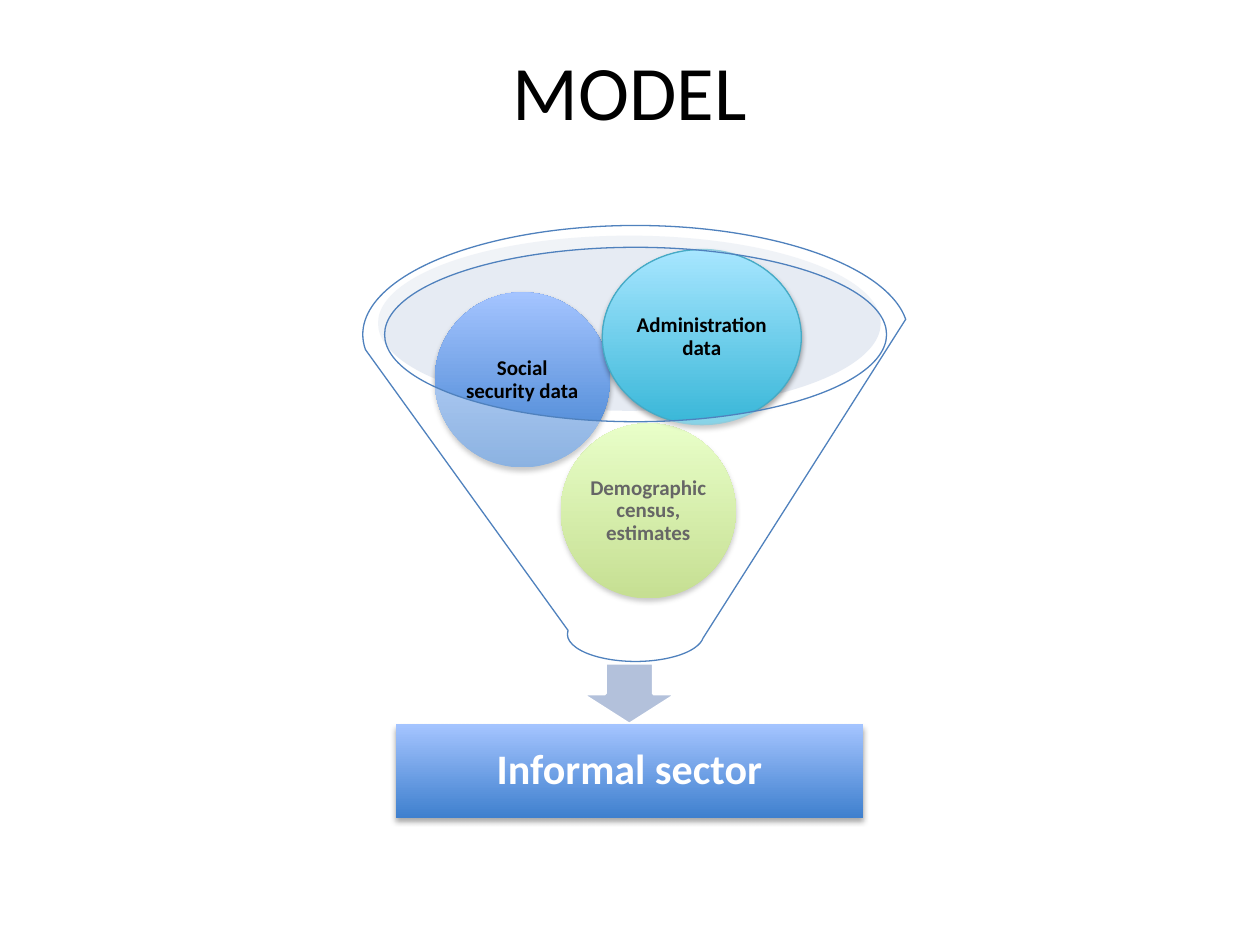
from dataclasses import dataclass
from typing import Optional

from lxml import etree
from pptx import Presentation
from pptx import util as u
from pptx.dml.color import RGBColor
from pptx.enum import shapes, text
from pptx.oxml import ns

BLACK = RGBColor(0x00, 0x00, 0x00)
WHITE = RGBColor(0xFF, 0xFF, 0xFF)
RIM = RGBColor(0xC2, 0xCD, 0xE1)
ARROW = RGBColor(0xB3, 0xC1, 0xDB)
OUTLINE = RGBColor(0x4F, 0x81, 0xBD)
TEAL_OUTLINE = RGBColor(0x46, 0xAA, 0xC5)
BLUE = (RGBColor(0x3F, 0x80, 0xCE), RGBColor(0xA4, 0xC4, 0xFF))
GREEN = (RGBColor(0xA0, 0xCA, 0x4A), RGBColor(0xDA, 0xFF, 0xA5))
TEAL = (RGBColor(0x39, 0xB7, 0xD8), RGBColor(0xA7, 0xE6, 0xFF))
FONT = "Calibri"
KIND = shapes.MSO_SHAPE


@dataclass(frozen=True)
class Box:
    left: float
    top: float
    width: float
    height: float

    def lengths(self) -> list:
        return [u.Inches(v) for v in (self.left, self.top, self.width, self.height)]


@dataclass(frozen=True)
class Block:
    label: str
    box: Box
    gradient: tuple
    kind: int = KIND.OVAL
    size: int = 12
    color: RGBColor = BLACK
    inset: float = 0.02
    outline: Optional[RGBColor] = None


BLOCKS = [
    Block("Informal sector", Box(3.14, 5.75, 3.71, 0.74), BLUE, KIND.RECTANGLE, 24, WHITE, 0.19),
    Block("Demographic census, estimates", Box(4.45, 3.36, 1.39, 1.39), GREEN),
    Block("Social security data", Box(3.45, 2.32, 1.39, 1.39), BLUE),
    Block("Administration data", Box(4.78, 1.98, 1.58, 1.39), TEAL, outline=TEAL_OUTLINE),
]


def add_plain(slide, kind: int, box: Box, outline: Optional[RGBColor] = None, weight: float = 0.75):
    shape = slide.shapes.add_shape(kind, *box.lengths())
    shape.shadow.inherit = False
    if outline is None:
        shape.line.fill.background()
    else:
        shape.line.color.rgb = outline
        shape.line.width = u.Pt(weight)
    return shape


def fill_solid(shape, color: RGBColor, opacity: int = 100) -> None:
    shape.fill.solid()
    shape.fill.fore_color.rgb = color
    if opacity < 100:
        tint = shape._element.spPr.find(ns.qn("a:solidFill"))[0]
        etree.SubElement(tint, ns.qn("a:alpha"), val=str(opacity * 1000))


def fill_gradient(shape, colors: tuple) -> None:
    shape.fill.gradient()
    shape.fill.gradient_angle = 90
    for stop, color in zip(shape.fill.gradient_stops, colors):
        stop.color.rgb = color


def cast_shadow(shape) -> None:
    effects = shape._element.spPr.find(ns.qn("a:effectLst"))
    shadow = etree.SubElement(
        effects, ns.qn("a:outerShdw"), blurRad=str(u.Pt(3.1)), dist=str(u.Pt(1.8)),
        dir="5400000", rotWithShape="0",
    )
    tint = etree.SubElement(shadow, ns.qn("a:srgbClr"), val=str(BLACK))
    etree.SubElement(tint, ns.qn("a:alpha"), val="35000")


def write(frame, words: str, size: int, color: RGBColor, bold: bool = False):
    frame.word_wrap = True
    line = frame.paragraphs[0]
    line.alignment = text.PP_ALIGN.CENTER
    run = line.add_run()
    run.text = words
    run.font.name = FONT
    run.font.size = u.Pt(size)
    run.font.bold = bold
    run.font.color.rgb = color
    return line


def add_block(slide, block: Block) -> None:
    shape = add_plain(slide, block.kind, block.box, block.outline)
    fill_gradient(shape, block.gradient)
    cast_shadow(shape)
    frame = shape.text_frame
    frame.vertical_anchor = text.MSO_ANCHOR.MIDDLE
    frame.margin_left = frame.margin_right = u.Inches(block.inset)
    frame.margin_top = frame.margin_bottom = u.Inches(block.inset)
    write(frame, block.label, block.size, block.color, True).line_spacing = 0.9


def main() -> None:
    deck = Presentation()
    deck.slide_width, deck.slide_height = u.Inches(10), u.Inches(7.5)
    slide = deck.slides.add_slide(deck.slide_layouts[6])

    rim = add_plain(slide, KIND.OVAL, Box(3, 1.87, 3.99, 1.39))
    fill_solid(rim, RIM, 40)
    arrow = add_plain(slide, KIND.DOWN_ARROW, Box(4.61, 5.26, 0.77, 0.49), WHITE, 2)
    fill_solid(arrow, ARROW)
    for block in BLOCKS:
        add_block(slide, block)
    funnel = add_plain(slide, KIND.FUNNEL, Box(2.88, 1.79, 4.33, 3.46), OUTLINE)
    fill_solid(funnel, WHITE, 40)

    title = slide.shapes.add_textbox(*Box(0.5, 0.3, 9, 1.25).lengths())
    write(title.text_frame, "MODEL", 44, BLACK)
    deck.save("out.pptx")


if __name__ == "__main__":
    main()
